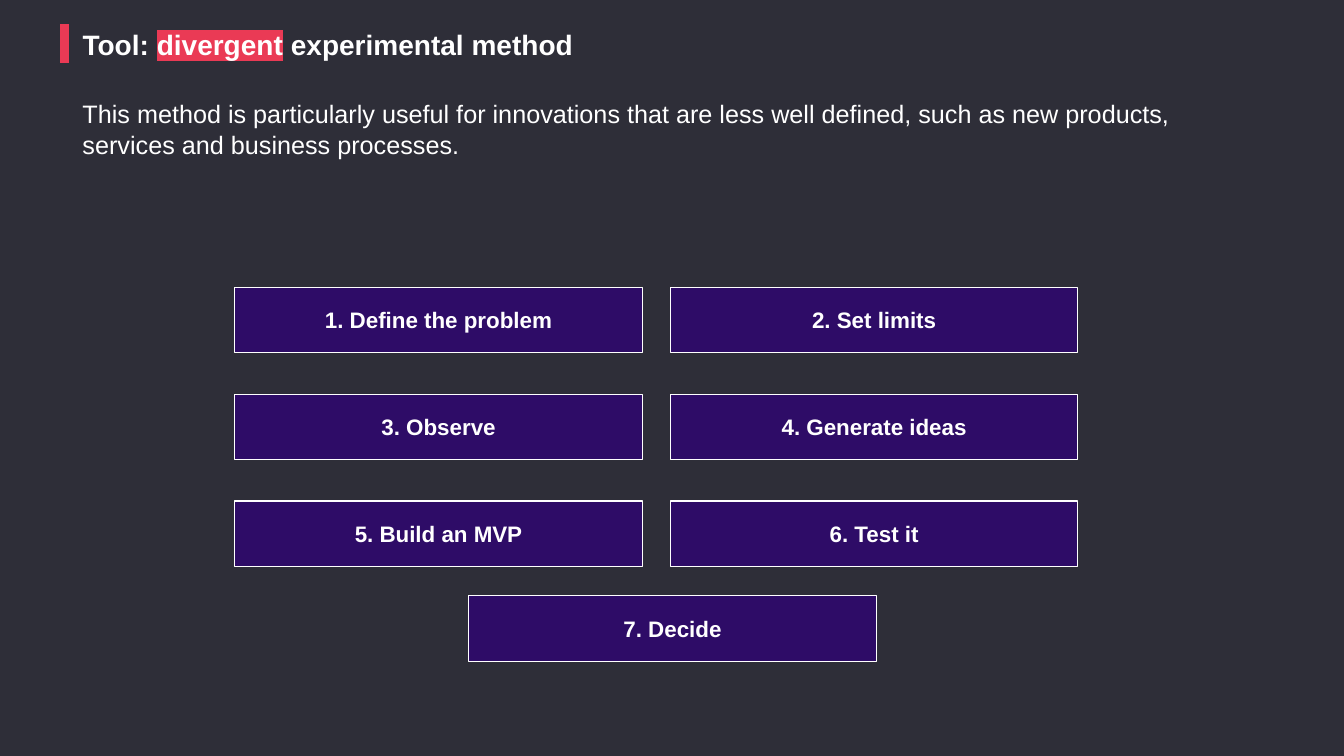
from lxml import etree
from pptx import Presentation
from pptx.dml.color import RGBColor
from pptx.enum.shapes import MSO_CONNECTOR as Line, MSO_SHAPE as Shape
from pptx.enum.text import MSO_ANCHOR as Anchor, PP_ALIGN as Align
from pptx.oxml.ns import qn
from pptx.util import Inches, Pt

DARK = RGBColor(0x2E, 0x2E, 0x38)
RED = RGBColor(0xEA, 0x3A, 0x55)
PURPLE = RGBColor(0x2E, 0x0C, 0x67)
WHITE = RGBColor(0xFF, 0xFF, 0xFF)


def style(run, size, bold=False):
    font = run.font
    font.name, font.size, font.bold = "Arial", Pt(size), bold
    font.color.rgb = WHITE


def add_text(left, top, width, height):
    box = slide.shapes.add_textbox(Inches(left), Inches(top), Inches(width), Inches(height))
    box.text_frame.word_wrap = True
    return box.text_frame.paragraphs[0]


prs = Presentation()
prs.slide_width, prs.slide_height = Inches(13.33), Inches(7.5)
slide = prs.slides.add_slide(prs.slide_layouts[6])
slide.background.fill.solid()
slide.background.fill.fore_color.rgb = DARK

# Title with its red bar
bar = slide.shapes.add_connector(
    Line.STRAIGHT, Inches(0.64), Inches(0.24), Inches(0.64), Inches(0.63))
bar.line.color.rgb = RED
bar.line.width = Pt(6)
etree.SubElement(bar._element.spPr, qn("a:effectLst"))

title = add_text(0.72, 0.22, 7.78, 0.44)
for part in ("Tool: ", "divergent", " experimental method"):
    run = title.add_run()
    run.text = part
    style(run, 20, True)
    if part == "divergent":
        mark = etree.Element(qn("a:highlight"))
        etree.SubElement(mark, qn("a:srgbClr"), val=str(RED))
        run._r.rPr.find(qn("a:solidFill")).addnext(mark)

# Introduction
intro = add_text(0.72, 0.93, 11.86, 0.71)
intro.text = ("This method is particularly useful for innovations that are less well "
              "defined, such as new products, services and business processes.")
style(intro.runs[0], 18)

# Steps: two columns, with the last step centred below
steps = ["Define the problem", "Set limits", "Observe", "Generate ideas",
         "Build an MVP", "Test it", "Decide"]
for i, step in enumerate(steps):
    row, col = divmod(i, 2)
    left, top = 2.33 + 4.32 * col, 2.85 + 1.06 * row
    if i == len(steps) - 1:
        left, top = 4.65, 5.91
    box = slide.shapes.add_shape(
        Shape.RECTANGLE, Inches(left), Inches(top), Inches(4.04), Inches(0.65))
    box.shadow.inherit = False
    box.fill.solid()
    box.fill.fore_color.rgb = PURPLE
    box.line.color.rgb = WHITE
    box.line.width = Pt(0.75)
    frame = box.text_frame
    frame.vertical_anchor = Anchor.MIDDLE
    frame.text = f"{i + 1}. {step}"
    frame.paragraphs[0].alignment = Align.CENTER
    style(frame.paragraphs[0].runs[0], 16, True)

prs.save("out.pptx")
